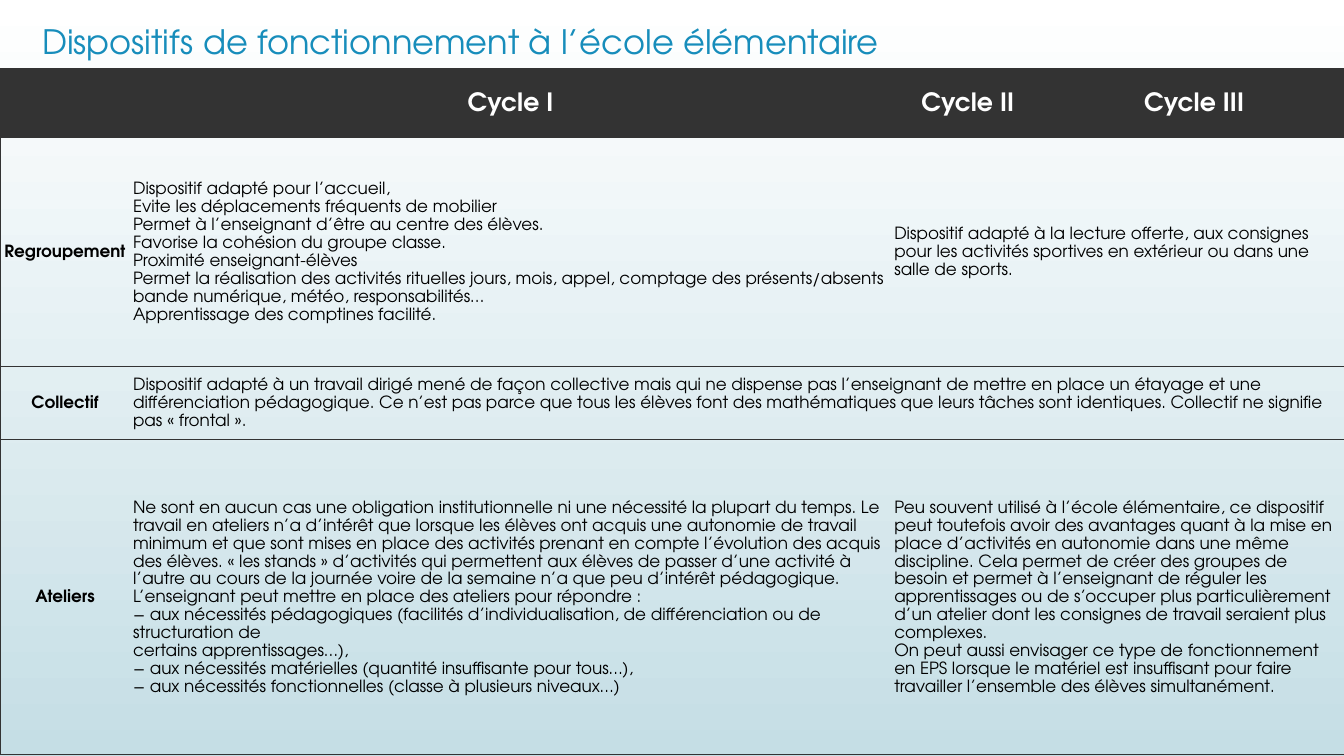
from lxml.etree import SubElement
from pptx import Presentation
from pptx.dml.color import RGBColor
from pptx.enum.text import MSO_ANCHOR, PP_ALIGN
from pptx.oxml.ns import qn
from pptx.util import Inches, Pt

FONT = "TeX Gyre Adventor"
DARK, BLACK, WHITE, BLUE = "333333", "000000", "FFFFFF", "178DBB"
COLUMN_WIDTHS = [1.29, 7.55, 1.52, 2.97]
ROW_HEIGHTS = [0.68, 2.28, 0.72, 3.13]

TITLE = "Dispositifs de fonctionnement à l’école élémentaire"
HEADINGS = ["Cycle I", "Cycle II", "Cycle III"]

# Each row: label, then (first column, last column, paragraphs)
ROWS = [
    ("Regroupement", [
        (1, 1, [
            "Dispositif adapté pour l’accueil,",
            "Evite les déplacements fréquents de mobilier",
            "Permet à l’enseignant d’être au centre des élèves.",
            "Favorise la cohésion du groupe classe.",
            "Proximité enseignant-élèves",
            "Permet la réalisation des activités rituelles jours, mois, appel, "
            "comptage des présents/absents",
            "bande numérique, météo, responsabilités…",
            "Apprentissage des comptines facilité.",
        ]),
        (2, 3, [
            "Dispositif adapté à la lecture offerte, aux consignes pour les activités "
            "sportives en extérieur ou dans une salle de sports.",
        ]),
    ]),
    ("Collectif", [
        (1, 3, [
            "Dispositif adapté à un travail dirigé mené de façon collective mais qui ne "
            "dispense pas l’enseignant de mettre en place un étayage et une différenciation "
            "pédagogique. Ce n’est pas parce que tous les élèves font des mathématiques que "
            "leurs tâches sont identiques. Collectif ne signifie pas « frontal ».",
        ]),
    ]),
    ("Ateliers", [
        (1, 1, [
            "Ne sont en aucun cas une obligation institutionnelle ni une nécessité la plupart "
            "du temps. Le travail en ateliers n’a d’intérêt que lorsque les élèves ont acquis "
            "une autonomie de travail minimum et que sont mises en place des activités prenant "
            "en compte l’évolution des acquis des élèves. « les stands » d’activités qui "
            "permettent aux élèves de passer d’une activité à l’autre au cours de la journée "
            "voire de la semaine n’a que peu d’intérêt pédagogique.",
            "L’enseignant peut mettre en place des ateliers pour répondre :",
            "− aux nécessités pédagogiques (facilités d’individualisation, de différenciation "
            "ou de structuration de",
            "certains apprentissages…),",
            "− aux nécessités matérielles (quantité insuffisante pour tous…),",
            "− aux nécessités fonctionnelles (classe à plusieurs niveaux…)",
        ]),
        (2, 3, [
            "Peu souvent utilisé à l’école élémentaire, ce dispositif peut toutefois avoir des "
            "avantages quant à la mise en place d’activités en autonomie dans une même "
            "discipline. Cela permet de créer des groupes de besoin et permet à l’enseignant "
            "de réguler les apprentissages ou de s’occuper plus particulièrement d’un atelier "
            "dont les consignes de travail seraient plus complexes.",
            "On peut aussi envisager ce type de fonctionnement en EPS lorsque le matériel est "
            "insuffisant pour faire travailler l’ensemble des élèves simultanément.",
        ]),
    ]),
]


def color(hex_string):
    return RGBColor.from_string(hex_string)


def add_run(paragraph, text, size, hex_string, bold=False):
    run = paragraph.add_run()
    run.text = text
    run.font.name = FONT
    run.font.size = Pt(size)
    run.font.bold = bold
    run.font.color.rgb = color(hex_string)


def paint_background(slide):
    fill = slide.background.fill
    fill.gradient()
    fill.gradient_angle = 270
    for stop, position, hex_string in zip(fill.gradient_stops, (0, 1), (WHITE, "C5DEE5")):
        stop.position = position
        stop.color.rgb = color(hex_string)


def add_title(slide, left, top, width, height):
    text_frame = slide.shapes.add_textbox(left, top, width, height).text_frame
    text_frame.word_wrap = True
    text_frame.vertical_anchor = MSO_ANCHOR.MIDDLE
    add_run(text_frame.paragraphs[0], TITLE, 24, BLUE)


def set_borders(cell, first, last):
    """Rules above and below every cell; side rules only on the table's edges."""
    properties = cell._tc.get_or_add_tcPr()
    for tag, visible in (("a:lnL", first), ("a:lnR", last), ("a:lnT", True), ("a:lnB", True)):
        line = SubElement(properties, qn(tag), w=str(Pt(0.75)))
        if visible:
            SubElement(SubElement(line, qn("a:solidFill")), qn("a:srgbClr"), val=DARK)
        else:
            SubElement(line, qn("a:noFill"))


def write_cell(cell, paragraphs, size=12, hex_string=BLACK, bold=False, align=PP_ALIGN.LEFT):
    text_frame = cell.text_frame
    for index, text in enumerate(paragraphs):
        paragraph = text_frame.add_paragraph() if index else text_frame.paragraphs[0]
        paragraph.alignment = align
        paragraph.line_spacing = 1.15
        add_run(paragraph, text, size, hex_string, bold)


def add_cycle_table(slide, left, top, width, height):
    table = slide.shapes.add_table(
        len(ROW_HEIGHTS), len(COLUMN_WIDTHS), left, top, width, height).table
    table.first_row = table.horz_banding = False
    for column, share in zip(table.columns, COLUMN_WIDTHS):
        column.width = int(width * share / sum(COLUMN_WIDTHS))
    for row, share in zip(table.rows, ROW_HEIGHTS):
        row.height = int(height * share / sum(ROW_HEIGHTS))

    # Cell frames and fills
    last_column = len(COLUMN_WIDTHS) - 1
    for row_index, row in enumerate(table.rows):
        for column_index, cell in enumerate(row.cells):
            set_borders(cell, column_index == 0, column_index == last_column)
            cell.vertical_anchor = MSO_ANCHOR.MIDDLE
            cell.margin_left = cell.margin_right = Inches(0.03)
            cell.margin_top = cell.margin_bottom = 0
            if row_index == 0:
                cell.fill.solid()
                cell.fill.fore_color.rgb = color(DARK)
            else:
                cell.fill.background()

    # Header row
    for column_index, heading in enumerate(HEADINGS, start=1):
        write_cell(table.cell(0, column_index), [heading], 18, WHITE, True, PP_ALIGN.CENTER)

    # Body rows
    for row_index, (label, entries) in enumerate(ROWS, start=1):
        write_cell(table.cell(row_index, 0), [label], bold=True, align=PP_ALIGN.CENTER)
        for first, last, paragraphs in entries:
            cell = table.cell(row_index, first)
            if last > first:
                cell.merge(table.cell(row_index, last))
            write_cell(cell, paragraphs)


def main():
    presentation = Presentation()
    presentation.slide_width = Inches(13.33)
    presentation.slide_height = Inches(7.5)
    slide = presentation.slides.add_slide(presentation.slide_layouts[6])
    paint_background(slide)
    add_title(slide, Inches(0.32), Inches(0.12), Inches(9.75), Inches(0.57))
    add_cycle_table(slide, 0, Inches(0.68), presentation.slide_width, Inches(6.81))
    presentation.save("out.pptx")


if __name__ == "__main__":
    main()
